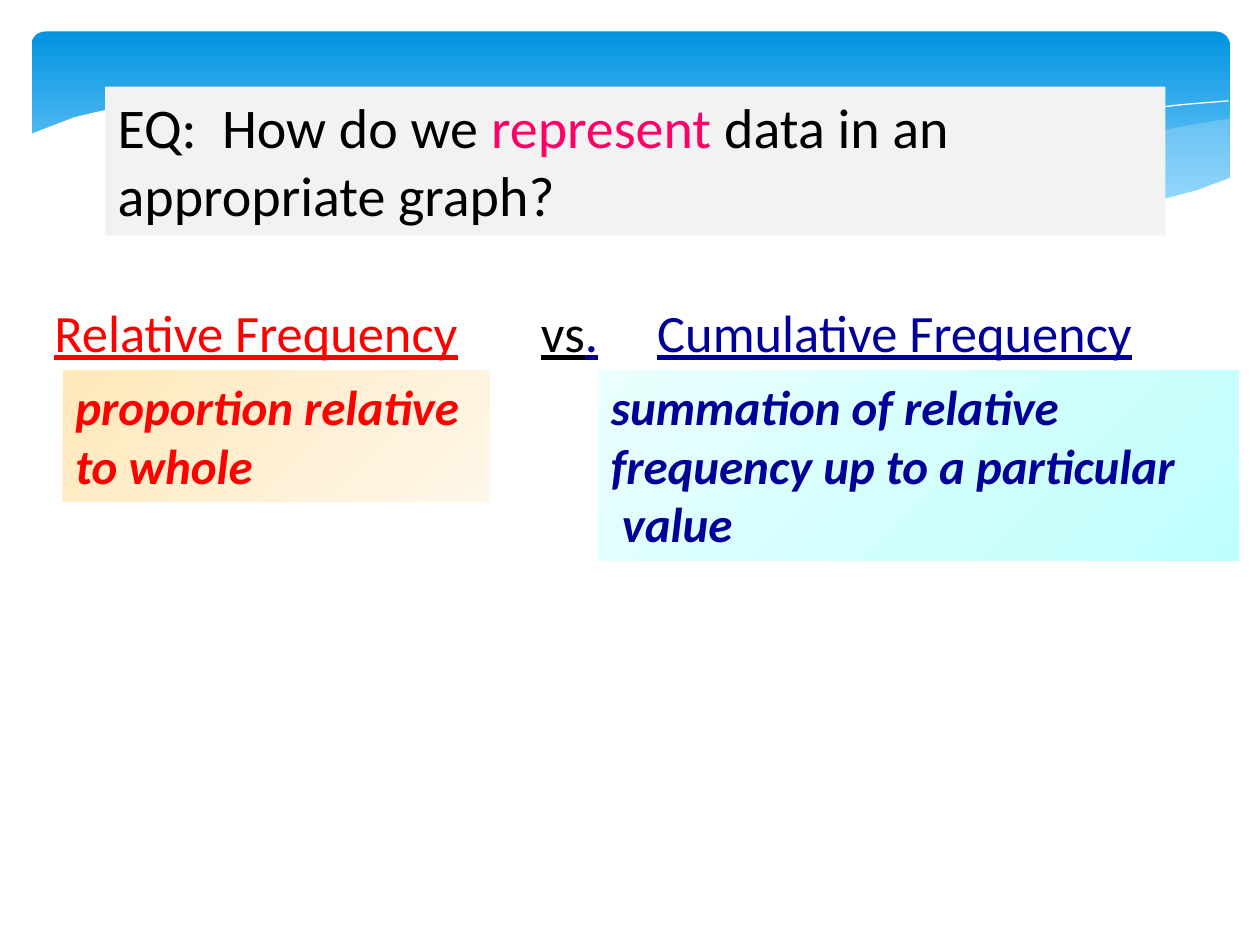
from lxml.etree import SubElement
from pptx import Presentation
from pptx.dml.color import RGBColor
from pptx.enum.shapes import MSO_SHAPE as SHAPE
from pptx.enum.text import MSO_ANCHOR as ANCHOR, MSO_AUTO_SIZE as AUTO, PP_ALIGN as ALIGN
from pptx.oxml.ns import qn
from pptx.util import Pt

FONT = "Calibri"
COLORS = {
    "white": "FFFFFF", "black": "000000", "gray": "F2F2F2", "pink": "FF0066",
    "red": "FF0000", "navy": "000099", "haze": "C6E7FC",
    "sky_top": "0293E0", "sky_end": "83D3FE",
    "peach": "FFE8BA", "peach_pale": "FFF7E9",
    "aqua": "BEFFFD", "aqua_pale": "EAFFFE",
}
HAZE = [(684.7, 49.7), (655.2, 54.7), (623.5, 61.2), (601.9, 67), (561.6, 76.3),
        (506.9, 87.8), (457.9, 97.2), (489.6, 100.8), (527, 104.4), (568.1, 105.8),
        (603.4, 104.4), (633.6, 99.4), (660.2, 92.9), (684.7, 83.5)]
CREST = [(423.4, 90.7), (482.4, 75.6), (540.7, 61.9), (583.9, 53.3), (626.4, 45.4),
         (657.4, 41.8), (684, 39.6)]
WAVE = [(685.4, 83.5), (666, 90.7), (644.4, 96.5), (620.6, 101.5), (594, 104.4),
        (564.5, 105.1), (529.9, 104.4), (491.8, 100.8), (448.6, 94.3), (398.9, 85.7),
        (344.2, 74.2), (303.8, 64.1), (263.5, 55.4), (226.8, 48.2), (192.2, 43.2),
        (162, 40.3), (133.9, 38.2), (109.4, 38.2), (87.1, 38.9), (67.7, 41),
        (50.4, 43.2), (36.7, 46.1), (24.5, 49), (15.1, 52.6), (7.9, 55.4),
        (-1.4, 59), (-1.4, 143.3), (685.4, 143.3)]


def rgb(name):
    """Return the named colour."""
    return RGBColor.from_string(COLORS[name])


def fill_solid(sp, color):
    """Give a shape a plain fill."""
    sp.fill.solid()
    sp.fill.fore_color.rgb = rgb(color)


def fill_gradient(sp, start, end, angle, last=1.0):
    """Give a shape a two-colour linear gradient."""
    sp.fill.gradient()
    sp.fill.gradient_angle = angle
    for stop, color, position in zip(sp.fill.gradient_stops, (start, end), (0, last)):
        stop.color.rgb = rgb(color)
        stop.position = position


def add_box(slide, kind, box):
    """Add a preset shape without line or shadow."""
    sp = slide.shapes.add_shape(kind, *map(Pt, box))
    sp.shadow.inherit = False
    sp.line.fill.background()
    return sp


def add_outline(slide, box, points, close=True):
    """Add a freeform whose points are relative to the box."""
    left, top = box[:2]
    pts = [(Pt(left + x), Pt(top + y)) for x, y in points]
    builder = slide.shapes.build_freeform(*pts[0])
    builder.add_line_segments(pts[1:], close=close)
    sp = builder.convert_to_shape()
    sp.shadow.inherit = False
    sp.line.fill.background()
    return sp


def write_lines(sp, lines, size, bold=False, italic=False, underline=False):
    """Write each line of (text, colour) runs as a left-aligned paragraph."""
    tf = sp.text_frame
    tf.word_wrap = True
    tf.auto_size = AUTO.NONE
    tf.vertical_anchor = ANCHOR.TOP
    for i, runs in enumerate(lines):
        p = tf.add_paragraph() if i else tf.paragraphs[0]
        p.alignment = ALIGN.LEFT
        for text, color in runs:
            r = p.add_run()
            r.text = text
            r.font.name, r.font.size = FONT, Pt(size)
            r.font.bold, r.font.italic, r.font.underline = bold, italic, underline
            r.font.color.rgb = rgb(color)


def add_banner(slide, box):
    """Draw the blue banner with its waves."""
    sky = add_box(slide, SHAPE.ROUNDED_RECTANGLE, box)
    sky.adjustments[0] = 0.07
    fill_gradient(sky, "sky_top", "sky_end", 270, 0.9)
    haze = add_outline(slide, box, HAZE)
    fill_solid(haze, "haze")
    color = haze.fill._xPr.find(f".//{qn('a:srgbClr')}")
    SubElement(color, qn("a:alpha"), val="29000")
    crest = add_outline(slide, box, CREST, close=False)
    crest.fill.background()
    crest.line.color.rgb = rgb("white")
    crest.line.width = Pt(0)
    fill_solid(add_outline(slide, box, WAVE), "white")


def add_title(slide, box):
    """Place the question in the title, in front of the banner."""
    sp = slide.shapes.title
    sp.left, sp.top, sp.width, sp.height = map(Pt, box)
    fill_solid(sp, "gray")
    write_lines(sp, [[("EQ:  How do we ", "black"), ("represent ", "pink"),
                      ("data in an appropriate graph?", "black")]], 32)
    slide.shapes._spTree.append(sp._element)


def add_heading(slide, box):
    """Write the two underlined terms, spaced by tab stops."""
    sp = slide.shapes.add_textbox(*map(Pt, box))
    write_lines(sp, [[("Relative Frequency\t", "red"), ("vs", "black"),
                      (".\tCumulative Frequency", "navy")]], 30, underline=True)
    tabs = SubElement(sp.text_frame.paragraphs[0]._p.get_or_add_pPr(), qn("a:tabLst"))
    for stop in (278, 344.5):
        SubElement(tabs, qn("a:tab"), pos=str(Pt(stop)), algn="l")


def add_definition(slide, box, lines, color, start, end, angle):
    """Add a tinted box holding one definition."""
    sp = add_box(slide, SHAPE.RECTANGLE, box)
    fill_gradient(sp, start, end, angle)
    write_lines(sp, [[(line, color)] for line in lines], 28, bold=True, italic=True)


def main():
    """Build and save the slide."""
    prs = Presentation()
    prs.slide_width, prs.slide_height = Pt(720), Pt(540)
    slide = prs.slides.add_slide(prs.slide_layouts[5])
    add_banner(slide, (18, 18, 684.7, 112.3))
    add_title(slide, (60, 49.5, 606, 85))
    add_heading(slide, (24, 168, 684, 44))
    add_definition(slide, (36, 211.5, 244, 75), ["proportion relative", "to whole"],
                   "red", "peach", "peach_pale", 315)
    add_definition(slide, (342, 211.5, 366, 109),
                   ["summation of relative", "frequency up to a particular", " value"],
                   "navy", "aqua", "aqua_pale", 135)
    prs.save("out.pptx")


if __name__ == "__main__":
    main()
